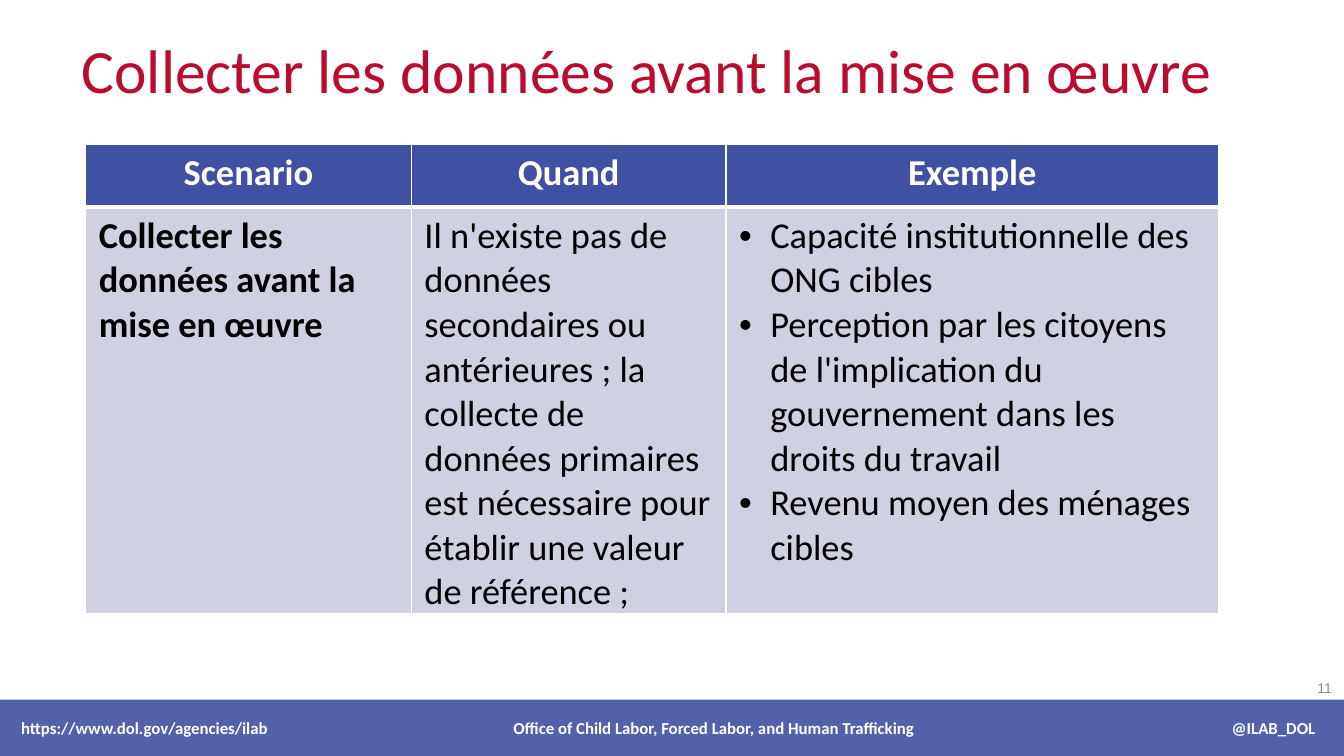
from lxml.etree import SubElement
from pptx import Presentation
from pptx.dml.color import RGBColor
from pptx.enum.shapes import MSO_SHAPE as Shape
from pptx.enum.text import MSO_ANCHOR as Anchor, PP_ALIGN as Align
from pptx.oxml.ns import qn
from pptx.util import Inches, Pt

RED = RGBColor(0xBA, 0x0C, 0x2F)
BLUE = RGBColor(0x3F, 0x51, 0xA2)
PALE = RGBColor(0xCF, 0xD0, 0xE0)
GREY = RGBColor(0x8C, 0x8C, 0x8C)
WHITE = RGBColor(0xFF, 0xFF, 0xFF)
BLACK = RGBColor(0x00, 0x00, 0x00)

HEADINGS = ["Scenario", "Quand", "Exemple"]
SCENARIO = "Collecter les données avant la mise en œuvre"
WHEN = ("Il n'existe pas de données secondaires ou antérieures ; la collecte de données "
        "primaires est nécessaire pour établir une valeur de référence ;")
EXAMPLES = [
    "Capacité institutionnelle des ONG cibles",
    "Perception par les citoyens de l'implication du gouvernement dans les droits du travail",
    "Revenu moyen des ménages cibles",
]
FOOTER = [
    "https://www.dol.gov/agencies/ilab",
    "Office of Child Labor, Forced Labor, and Human Trafficking",
    "@ILAB_DOL",
]


class SlideBuilder:
    """Draws styled elements on one slide, with lengths in percent of its size."""

    font_name = "Calibri"
    insets = Inches(0.13), Inches(0.07)

    def __init__(self, presentation):
        self.width = presentation.slide_width
        self.height = presentation.slide_height
        self.slide = presentation.slides.add_slide(presentation.slide_layouts[6])

    def across(self, share):
        return round(self.width * share / 100)

    def down(self, share):
        return round(self.height * share / 100)

    def area(self, left, top, width, height):
        return self.across(left), self.down(top), self.across(width), self.down(height)

    def style(self, paragraph, size, color, bold=False, align=Align.LEFT, name=None):
        paragraph.alignment = align
        font = paragraph.font
        font.name, font.size, font.bold = name or self.font_name, Pt(size), bold
        font.color.rgb = color

    def inset(self, target):
        target.margin_left = target.margin_right = self.insets[0]
        target.margin_top = target.margin_bottom = self.insets[1]

    def text(self, area, words, size, color, anchor, **style):
        frame = self.slide.shapes.add_textbox(*self.area(*area)).text_frame
        frame.word_wrap = True
        frame.vertical_anchor = anchor
        self.inset(frame)
        frame.text = words
        self.style(frame.paragraphs[0], size, color, **style)

    def bullet(self, paragraph):
        properties = paragraph._p.get_or_add_pPr()
        properties.set("marL", str(Inches(0.31)))
        properties.set("indent", str(-Inches(0.31)))
        SubElement(properties, qn("a:buFont"), typeface="Arial")
        SubElement(properties, qn("a:buChar"), char="•")

    def borders(self, cell, top, bottom):
        properties = cell._tc.get_or_add_tcPr()
        for side, points in zip("LRTB", (1, 1, top, bottom)):
            line = SubElement(properties, qn(f"a:ln{side}"), w=str(Pt(points)))
            fill = SubElement(line, qn("a:solidFill"))
            SubElement(fill, qn("a:srgbClr"), val=str(WHITE))

    def cell(self, cell, lines, fill, color, bold, align, bulleted, rules):
        self.borders(cell, *rules)
        cell.fill.solid()
        cell.fill.fore_color.rgb = fill
        self.inset(cell)
        cell.text_frame.text = "\n".join(lines)
        for paragraph in cell.text_frame.paragraphs:
            if bulleted:
                self.bullet(paragraph)
            self.style(paragraph, 26, color, bold, align)

    def table(self, left, top, columns, rows, headings, body):
        area = self.area(left, top, sum(columns), sum(rows))
        table = self.slide.shapes.add_table(len(rows), len(columns), *area).table
        table.horz_banding = False
        for column, share in zip(table.columns, columns):
            column.width = self.across(share)
        for row, share in zip(table.rows, rows):
            row.height = self.down(share)
        for index, (heading, lines) in enumerate(zip(headings, body)):
            self.cell(table.cell(0, index), [heading], BLUE, WHITE, True,
                      Align.CENTER, False, (1, 3))
            self.cell(table.cell(1, index), lines, PALE, BLACK, index == 0,
                      Align.LEFT, len(lines) > 1, (3, 1))

    def footer(self, area, words, stops):
        bar = self.slide.shapes.add_shape(Shape.RECTANGLE, *self.area(*area))
        bar.shadow.inherit = False
        bar.line.fill.background()
        bar.fill.solid()
        bar.fill.fore_color.rgb = BLUE
        color = bar._element.spPr.find(qn("a:solidFill"))[0]
        SubElement(color, qn("a:alpha"), val="90000")
        frame = bar.text_frame
        frame.vertical_anchor = Anchor.MIDDLE
        frame.margin_left = Inches(0.21)
        frame.text = "\t".join(words)
        paragraph = frame.paragraphs[0]
        tabs = SubElement(paragraph._p.get_or_add_pPr(), qn("a:tabLst"))
        for kind, share in stops:
            SubElement(tabs, qn("a:tab"), pos=str(self.across(share)), algn=kind)
        self.style(paragraph, 12, WHITE, bold=True)


def main():
    presentation = Presentation()
    presentation.slide_width = Inches(13.33)
    presentation.slide_height = Inches(7.5)
    builder = SlideBuilder(presentation)
    builder.text((97.05, 88.27, 3.68, 5.33), "11", 10, GREY, Anchor.MIDDLE,
                 align=Align.JUSTIFY, name="Arial")
    builder.text((5.1, 3.33, 97.97, 11.6), SCENARIO, 44, RED, Anchor.BOTTOM)
    builder.table(6.38, 19.07, (24.23, 23.41, 36.68), (8.27, 53.73),
                  HEADINGS, ([SCENARIO], [WHEN], EXAMPLES))
    builder.footer((0, 92.53, 100, 7.47), FOOTER, (("ctr", 51.55), ("r", 96.3)))
    presentation.save("out.pptx")


if __name__ == "__main__":
    main()
